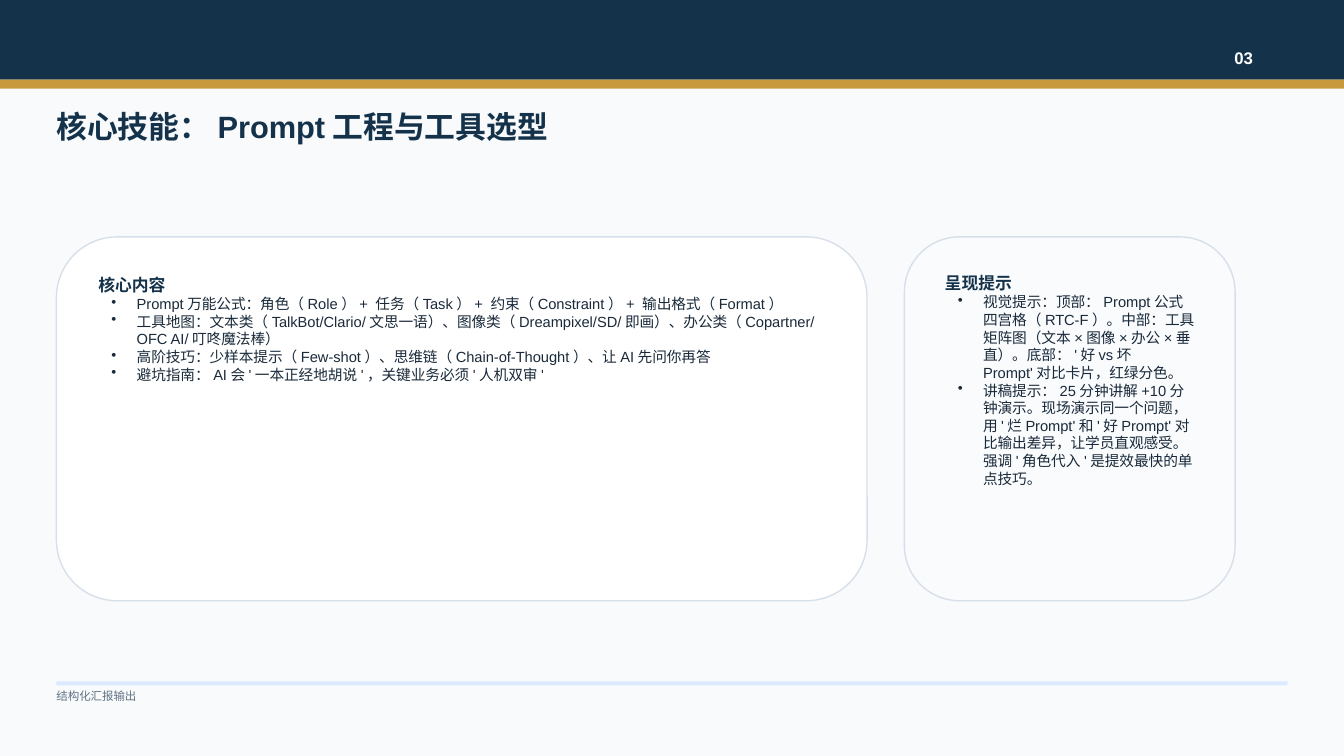
from lxml.etree import SubElement
from pptx import Presentation
from pptx.dml.color import RGBColor
from pptx.enum.shapes import MSO_SHAPE
from pptx.enum.text import MSO_ANCHOR, PP_ALIGN
from pptx.oxml.ns import qn
from pptx.util import Emu, Pt

SLIDE_WIDTH, SLIDE_HEIGHT = 1333, 750
MARGIN = 56
NAVY, GOLD, INK, GREY = "15324B", "C99A3D", "1A2A3A", "617284"
WHITE, PALE, BORDER, RULE, BACKGROUND = "FFFFFF", "F9FBFD", "D7E0EA", "DCE9FF", "F8FAFC"

CORE_POINTS = [
    "Prompt万能公式：角色（Role）+ 任务（Task）+ 约束（Constraint）+ 输出格式（Format）",
    "工具地图：文本类（TalkBot/Clario/文思一语）、图像类（Dreampixel/SD/即画）、办公类（Copartner/OFC AI/叮咚魔法棒）",
    "高阶技巧：少样本提示（Few-shot）、思维链（Chain-of-Thought）、让AI先问你再答",
    "避坑指南：AI会'一本正经地胡说'，关键业务必须'人机双审'",
]
HINT_POINTS = [
    "视觉提示：顶部：Prompt公式四宫格（RTC-F）。中部：工具矩阵图（文本×图像×办公×垂直）。"
    "底部：'好vs坏Prompt'对比卡片，红绿分色。",
    "讲稿提示：25分钟讲解+10分钟演示。现场演示同一个问题，用'烂Prompt'和'好Prompt'对比输出差异，"
    "让学员直观感受。强调'角色代入'是提效最快的单点技巧。",
]


def px(length):
    return Emu(length * 9144)


def color(value):
    return RGBColor.from_string(value)


def add_block(slide, kind, box, fill, line=None):
    shape = slide.shapes.add_shape(kind, *map(px, box))
    shape.shadow.inherit = False
    shape.fill.solid()
    shape.fill.fore_color.rgb = color(fill)
    if line:
        shape.line.color.rgb = color(line)
        shape.line.width = Pt(1)
    else:
        shape.line.fill.background()
    return shape


def set_frame(shape, insets=(0, 0, 0, 0), anchor=MSO_ANCHOR.TOP):
    frame = shape.text_frame
    frame.word_wrap = True
    frame.vertical_anchor = anchor
    frame.margin_left, frame.margin_top, frame.margin_right, frame.margin_bottom = map(px, insets)
    return frame


def write(paragraph, text, size, fill, bold=False, align=PP_ALIGN.LEFT, bullet=False):
    paragraph.alignment = align
    if bullet:
        properties = paragraph._p.get_or_add_pPr()
        properties.set("marL", str(px(38)))
        properties.set("indent", str(px(-25)))
        SubElement(properties, qn("a:buChar")).set("char", "•")
    run = paragraph.add_run()
    run.text = text
    run.font.name = "Arial"
    run.font.size = Pt(size)
    run.font.bold = bold
    run.font.color.rgb = color(fill)


def add_label(slide, box, text, **text_format):
    frame = set_frame(slide.shapes.add_textbox(*map(px, box)))
    write(frame.paragraphs[0], text, **text_format)


def add_header(slide, box, number):
    left, top, width, height = box
    stripe = 9
    band = height - stripe
    add_block(slide, MSO_SHAPE.RECTANGLE, (left, top, width, band), NAVY)
    add_block(slide, MSO_SHAPE.RECTANGLE, (left, top + band, width, stripe), GOLD)
    # Page number
    badge = add_block(slide, MSO_SHAPE.ROUNDED_RECTANGLE,
                      (left + width - 129, top + 39, 59, 35), NAVY)
    frame = set_frame(badge, (3, 4, 3, 3), MSO_ANCHOR.MIDDLE)
    write(frame.paragraphs[0], number, size=12, fill=WHITE, bold=True, align=PP_ALIGN.CENTER)


def add_card(slide, box, fill, heading, points):
    card = add_block(slide, MSO_SHAPE.ROUNDED_RECTANGLE, box, fill, line=BORDER)
    frame = set_frame(card, (24, 20, 22, 17))
    write(frame.paragraphs[0], heading, size=12, fill=NAVY, bold=True)
    for point in points:
        write(frame.add_paragraph(), point, size=10.5, fill=INK, bullet=True)


def add_cards(slide, box):
    left, top, width, height = box
    core_width, gap = 804, 37
    hint_left = left + core_width + gap
    add_card(slide, (left, top, core_width, height), WHITE, "核心内容", CORE_POINTS)
    add_card(slide, (hint_left, top, left + width - hint_left, height),
             PALE, "呈现提示", HINT_POINTS)


def add_footer(slide, box, text):
    left, top, width, height = box
    add_block(slide, MSO_SHAPE.ROUNDED_RECTANGLE, (left, top, width, 4), RULE)
    add_label(slide, (left, top + 8, 241, height - 8), text, size=8.2, fill=GREY)


def main():
    presentation = Presentation()
    presentation.slide_width = px(SLIDE_WIDTH)
    presentation.slide_height = px(SLIDE_HEIGHT)
    slide = presentation.slides.add_slide(presentation.slide_layouts[6])
    slide.background.fill.solid()
    slide.background.fill.fore_color.rgb = color(BACKGROUND)

    add_header(slide, (0, 0, SLIDE_WIDTH, 88), "03")
    add_label(slide, (MARGIN, 107, 973, 98), "核心技能：Prompt工程与工具选型",
              size=22, fill=NAVY, bold=True)
    add_cards(slide, (MARGIN, 235, 1169, 361))
    add_footer(slide, (MARGIN, 676, SLIDE_WIDTH - 2 * MARGIN, 28), "结构化汇报输出")

    presentation.save("out.pptx")


if __name__ == "__main__":
    main()
